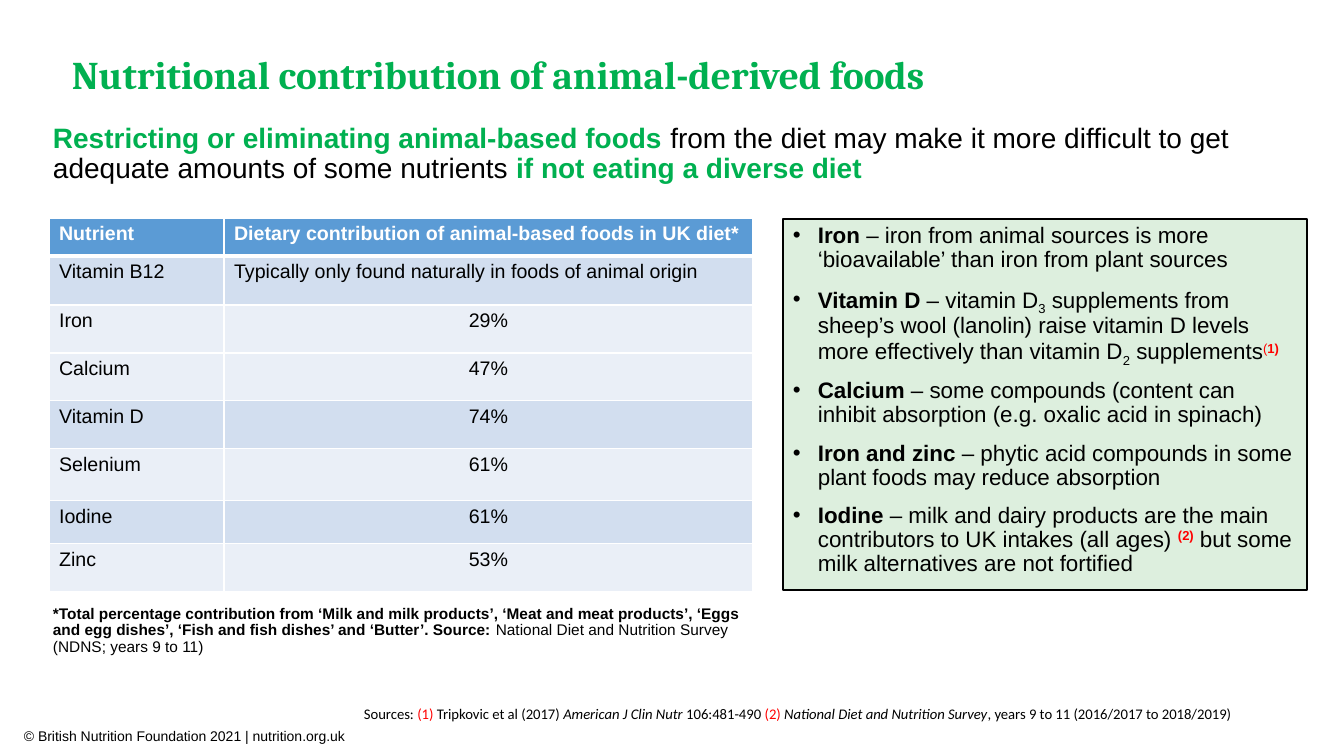
from lxml.etree import SubElement
from pptx import Presentation
from pptx.dml.color import RGBColor
from pptx.enum.shapes import MSO_SHAPE as Shape
from pptx.enum.text import MSO_ANCHOR as Anchor, PP_ALIGN as Align
from pptx.oxml.ns import qn
from pptx.util import Emu, Pt

EMU_PER_PX = 914400 / 100.8
GREEN, RED, BLACK, WHITE = "00B050", "FF0000", "000000", "FFFFFF"
HEADER_BLUE, BAND_DARK, BAND_LIGHT = "5B9BD5", "D2DEEF", "EAEFF7"

PLAIN = {}
BOLD = {"bold": True}
ITALIC = {"italic": True}
KEY = {"bold": True, "color": GREEN}
CITE = {"color": RED}
SUB = {"baseline": -25000}
SUPER = {"color": RED, "baseline": 30000}
SUPER_BOLD = SUPER | BOLD

TITLE = [("Nutritional contribution of animal-derived foods", KEY)]
MESSAGE = [
    ("Restricting or eliminating animal-based foods ", KEY),
    ("from the diet may make it more difficult to get adequate amounts of some nutrients ", PLAIN),
    ("if not eating a diverse diet", KEY),
]
TABLE_NOTE = [
    ("*Total percentage contribution from ‘Milk and milk products’, ‘Meat and meat products’, "
     "‘Eggs and egg dishes’, ‘Fish and fish dishes’ and ‘Butter’. Source: ", BOLD),
    ("National Diet and Nutrition Survey (NDNS; years 9 to 11)", PLAIN),
]
SOURCES = [
    ("Sources: ", PLAIN),
    ("(1) ", CITE),
    ("Tripkovic et al (2017) ", PLAIN),
    ("American J Clin Nutr", ITALIC),
    (" 106:481-490 ", PLAIN),
    ("(2) ", CITE),
    ("National Diet and Nutrition Survey", ITALIC),
    (", years 9 to 11 (2016/2017 to 2018/2019)", PLAIN),
]
COPYRIGHT = [("© British Nutrition Foundation 2021 | nutrition.org.uk", PLAIN)]
NUTRIENT_POINTS = [
    [("Iron ", BOLD),
     ("– iron from animal sources is more ‘bioavailable’ than iron from plant sources", PLAIN)],
    [("Vitamin D ", BOLD), ("– vitamin D", PLAIN), ("3", SUB),
     (" supplements from sheep’s wool (lanolin) raise vitamin D levels "
      "more effectively than vitamin D", PLAIN),
     ("2", SUB), (" supplements", PLAIN), ("(", SUPER), ("1)", SUPER_BOLD)],
    [("Calcium", BOLD),
     (" – some compounds (content can inhibit absorption (e.g. oxalic acid in spinach)", PLAIN)],
    [("Iron and zinc ", BOLD),
     ("– phytic acid compounds in some plant foods may reduce absorption", PLAIN)],
    [("Iodine", BOLD),
     (" – milk and dairy products are the main contributors to UK intakes (all ages) ", PLAIN),
     ("(2)", SUPER_BOLD), (" but some milk alternatives are not fortified", PLAIN)],
]

COLUMN_WIDTHS = (175, 529)
# nutrient, contribution, row height, fill
NUTRIENT_ROWS = [
    ("Nutrient", "Dietary contribution of animal-based foods in UK diet*", 38, HEADER_BLUE),
    ("Vitamin B12", "Typically only found naturally in foods of animal origin", 49, BAND_DARK),
    ("Iron", "29%", 48, BAND_LIGHT),
    ("Calcium", "47%", 48, BAND_LIGHT),
    ("Vitamin D", "74%", 48, BAND_DARK),
    ("Selenium", "61%", 52, BAND_LIGHT),
    ("Iodine", "61%", 43, BAND_DARK),
    ("Zinc", "53%", 48, BAND_LIGHT),
]


def px(length):
    return Emu(round(length * EMU_PER_PX))


def rgb(hex_code):
    return RGBColor.from_string(hex_code)


def add_runs(paragraph, runs, size, font="Arial"):
    for text, style in runs:
        run = paragraph.add_run()
        run.text = text
        look = {"name": font, "size": Pt(size), "bold": False, "italic": False} | style
        run.font.color.rgb = rgb(look.pop("color", BLACK))
        baseline = look.pop("baseline", None)
        if baseline:
            run.font._element.set("baseline", str(baseline))
        for attribute, value in look.items():
            setattr(run.font, attribute, value)


def add_text(slide, box, runs, size, font="Arial", line_spacing=0.9, anchor=Anchor.TOP):
    frame = slide.shapes.add_textbox(*map(px, box)).text_frame
    frame.word_wrap = True
    frame.vertical_anchor = anchor
    paragraph = frame.paragraphs[0]
    paragraph.line_spacing = line_spacing
    add_runs(paragraph, runs, size, font)


def add_bullet(paragraph):
    properties = paragraph._p.get_or_add_pPr()
    indent = px(25)
    properties.set("marL", str(indent))
    properties.set("indent", str(-indent))
    SubElement(properties, qn("a:buFont"), typeface="Arial")
    SubElement(properties, qn("a:buChar"), char="•")


def add_bullet_panel(slide, box, points):
    panel = slide.shapes.add_shape(Shape.RECTANGLE, *map(px, box))
    panel.shadow.inherit = False
    panel.fill.solid()
    panel.fill.fore_color.rgb = rgb("DDEFDE")
    panel.line.color.rgb = rgb(BLACK)
    panel.line.width = Pt(1.5)
    frame = panel.text_frame
    frame.word_wrap = True
    frame.vertical_anchor = Anchor.TOP
    for index, point in enumerate(points):
        paragraph = frame.add_paragraph() if index else frame.paragraphs[0]
        add_bullet(paragraph)
        paragraph.alignment = Align.LEFT
        paragraph.line_spacing = 0.9
        if index:
            paragraph.space_before = Pt(10)
        add_runs(paragraph, point, 16)


def set_borders(cell, top, bottom):
    """Draw white cell borders; top and bottom widths are in points."""
    properties = cell._tc.get_or_add_tcPr()
    for side, width in {"L": 1, "R": 1, "T": top, "B": bottom}.items():
        border = SubElement(properties, qn(f"a:ln{side}"), w=str(Pt(width)))
        fill = SubElement(border, qn("a:solidFill"))
        SubElement(fill, qn("a:srgbClr"), val=WHITE)


def add_nutrient_table(slide, left, top):
    heights = [height for _, _, height, _ in NUTRIENT_ROWS]
    box = (left, top, sum(COLUMN_WIDTHS), sum(heights))
    table = slide.shapes.add_table(len(heights), len(COLUMN_WIDTHS), *map(px, box)).table
    for column, width in zip(table.columns, COLUMN_WIDTHS):
        column.width = px(width)
    for index, (nutrient, share, height, band) in enumerate(NUTRIENT_ROWS):
        table.rows[index].height = px(height)
        style = {"bold": True, "color": WHITE} if index == 0 else PLAIN
        for cell, text in zip(table.rows[index].cells, (nutrient, share)):
            set_borders(cell, top=3 if index == 1 else 1, bottom=3 if index == 0 else 1)
            cell.fill.solid()
            cell.fill.fore_color.rgb = rgb(band)
            paragraph = cell.text_frame.paragraphs[0]
            paragraph.alignment = Align.CENTER if text.endswith("%") else Align.LEFT
            add_runs(paragraph, [(text, style)], 14)


def main():
    deck = Presentation()
    deck.slide_width, deck.slide_height = px(1344), px(756)
    slide = deck.slides.add_slide(deck.slide_layouts[6])
    add_text(slide, (14, 723, 385, 57), COPYRIGHT, 10, line_spacing=1.0)
    add_text(slide, (43, 119, 1221, 92), MESSAGE, 20)
    add_text(slide, (43, 601, 709, 73), TABLE_NOTE, 11)
    add_bullet_panel(slide, (783, 219, 524, 371), NUTRIENT_POINTS)
    add_nutrient_table(slide, 49, 218)
    add_text(slide, (354, 702, 964, 38), SOURCES, 10.5, "Calibri")
    add_text(slide, (62, 16, 1043, 122), TITLE, 28, "Cambria", anchor=Anchor.MIDDLE)
    deck.save("out.pptx")


if __name__ == "__main__":
    main()
